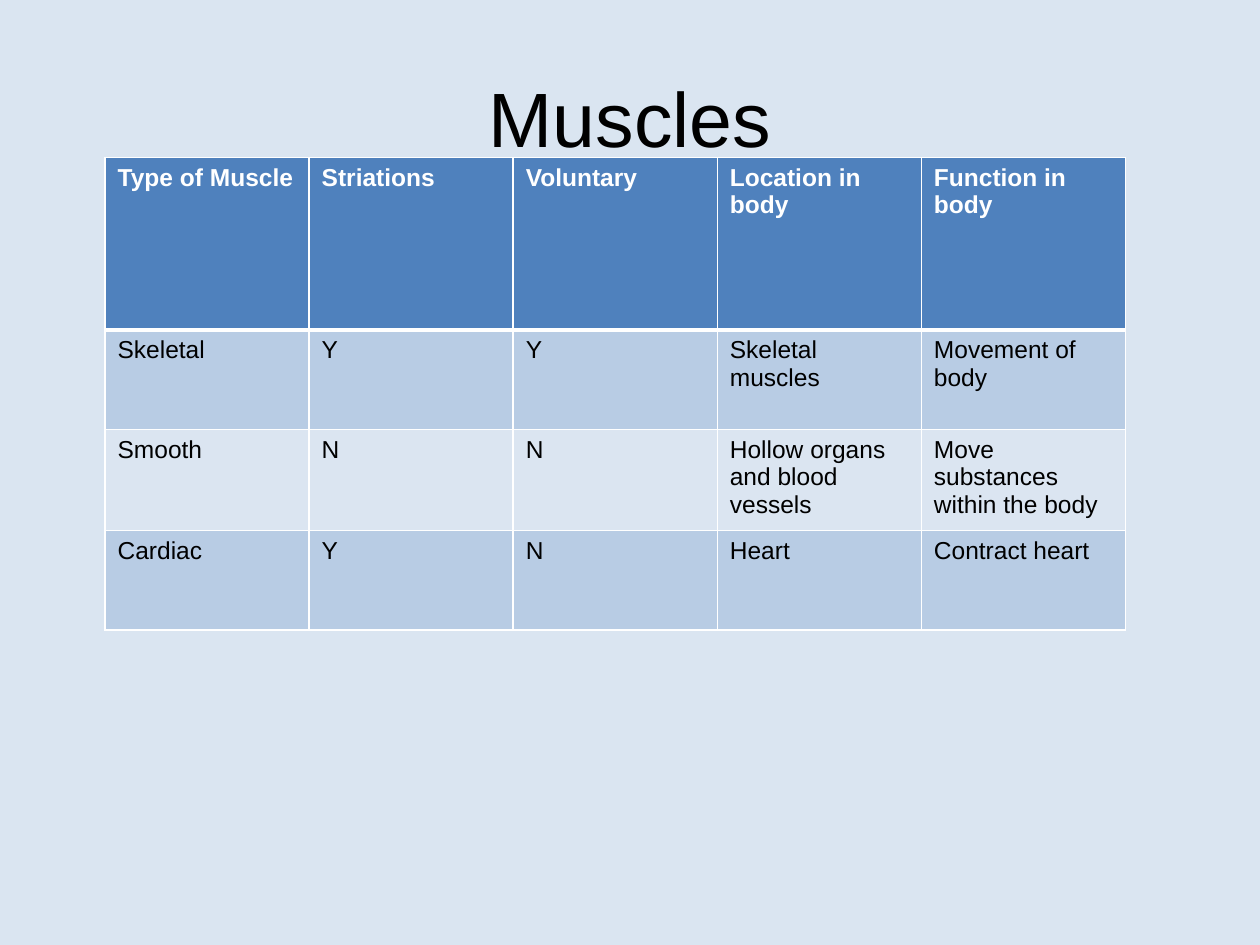
import lxml.etree
import pptx
import pptx.dml.color
import pptx.enum.text
import pptx.oxml.ns
import pptx.util

RGBColor = pptx.dml.color.RGBColor
BACKGROUND = RGBColor(0xDA, 0xE5, 0xF1)
HEADER = RGBColor(0x4F, 0x81, 0xBD)
BAND_DARK = RGBColor(0xB8, 0xCC, 0xE4)
BAND_LIGHT = RGBColor(0xDB, 0xE5, 0xF1)
WHITE = RGBColor(0xFF, 0xFF, 0xFF)
BLACK = RGBColor(0x00, 0x00, 0x00)

MUSCLES = [
    ["Type of Muscle", "Striations", "Voluntary", "Location in body", "Function in body"],
    ["Skeletal", "Y", "Y", "Skeletal muscles", "Movement of body"],
    ["Smooth", "N", "N", "Hollow organs and blood vessels", "Move substances within the body"],
    ["Cardiac", "Y", "N", "Heart", "Contract heart"],
]


class SlideBuilder:
    font_name = "Arial"
    title_size = 44
    body_size = 14
    thin_line = 1
    thick_line = 3

    def __init__(self, presentation):
        self.width = presentation.slide_width
        self.height = presentation.slide_height
        self.slide = presentation.slides.add_slide(presentation.slide_layouts[6])
        self.slide.background.fill.solid()
        self.slide.background.fill.fore_color.rgb = BACKGROUND

    def box(self, left, top, width, height):
        return (round(left * self.width), round(top * self.height),
                round(width * self.width), round(height * self.height))

    def style(self, paragraph, size, color, bold=False):
        paragraph.font.name = self.font_name
        paragraph.font.size = pptx.util.Pt(size)
        paragraph.font.color.rgb = color
        paragraph.font.bold = bold

    def title(self, text, *shares):
        frame = self.slide.shapes.add_textbox(*self.box(*shares)).text_frame
        frame.word_wrap = True
        frame.vertical_anchor = pptx.enum.text.MSO_ANCHOR.MIDDLE
        paragraph = frame.paragraphs[0]
        paragraph.text = text
        paragraph.alignment = pptx.enum.text.PP_ALIGN.CENTER
        self.style(paragraph, self.title_size, BLACK)

    def border(self, cell, side, points):
        qn = pptx.oxml.ns.qn
        properties = cell._tc.get_or_add_tcPr()
        line = lxml.etree.SubElement(properties, qn(f"a:ln{side}"), w=str(pptx.util.Pt(points)))
        fill = lxml.etree.SubElement(line, qn("a:solidFill"))
        lxml.etree.SubElement(fill, qn("a:srgbClr"), val=str(WHITE))

    def cell(self, cell, text, row):
        header = row == 0
        thick_side = {0: "B", 1: "T"}.get(row)
        for side in "LRTB":
            self.border(cell, side, self.thick_line if side == thick_side else self.thin_line)
        cell.fill.solid()
        cell.fill.fore_color.rgb = HEADER if header else BAND_DARK if row % 2 else BAND_LIGHT
        cell.text = text
        self.style(cell.text_frame.paragraphs[0], self.body_size,
                   WHITE if header else BLACK, header)

    def table(self, rows, left, top, width, row_heights):
        shares = self.box(left, top, width, sum(row_heights))
        table = self.slide.shapes.add_table(len(rows), len(rows[0]), *shares).table
        for row, (texts, height) in enumerate(zip(rows, row_heights)):
            table.rows[row].height = round(height * self.height)
            for column, text in enumerate(texts):
                self.cell(table.cell(row, column), text, row)


def main():
    presentation = pptx.Presentation()
    presentation.slide_width = pptx.util.Inches(10)
    presentation.slide_height = pptx.util.Inches(7.5)
    builder = SlideBuilder(presentation)
    builder.title("Muscles", 0.05, 0.04, 0.9, 1 / 6)
    body_height = 0.79 / 7.5
    builder.table(MUSCLES, 1 / 12, 1 / 6, 0.81, [1.37 / 7.5] + [body_height] * 3)
    presentation.save("out.pptx")


if __name__ == "__main__":
    main()
